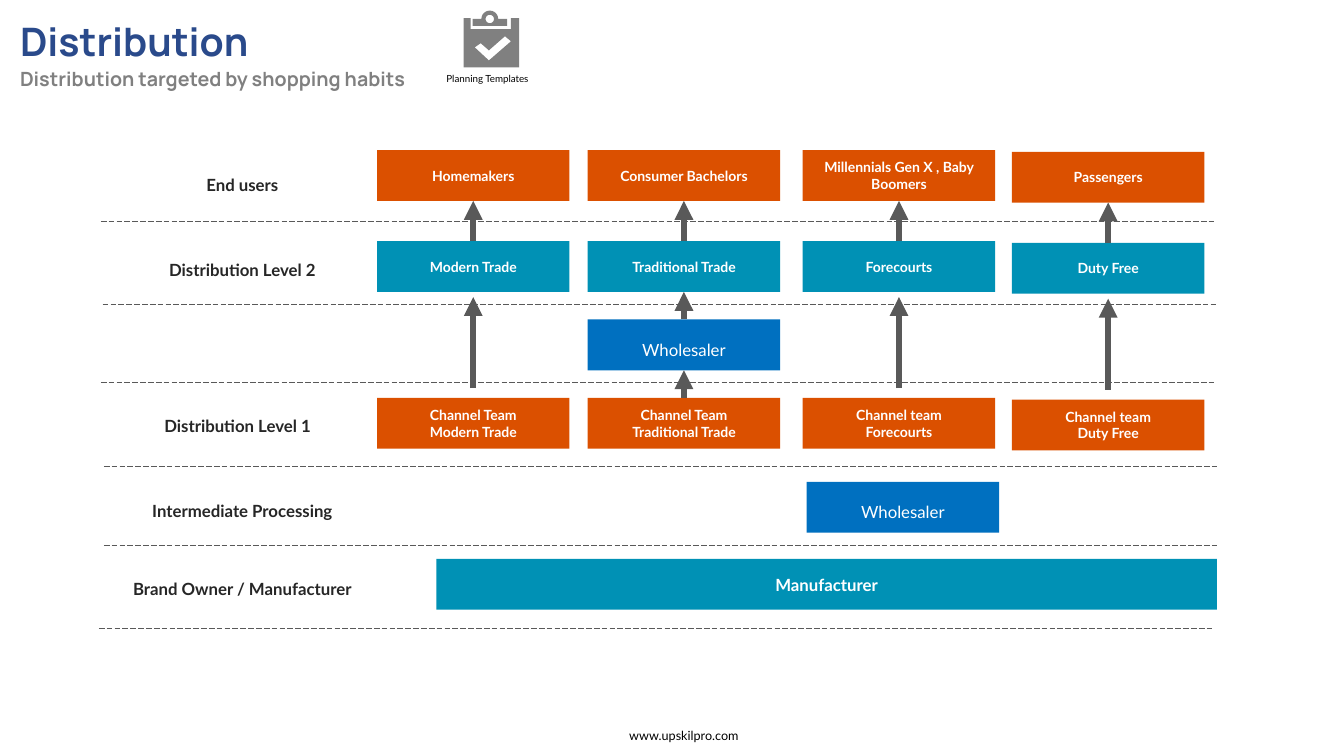
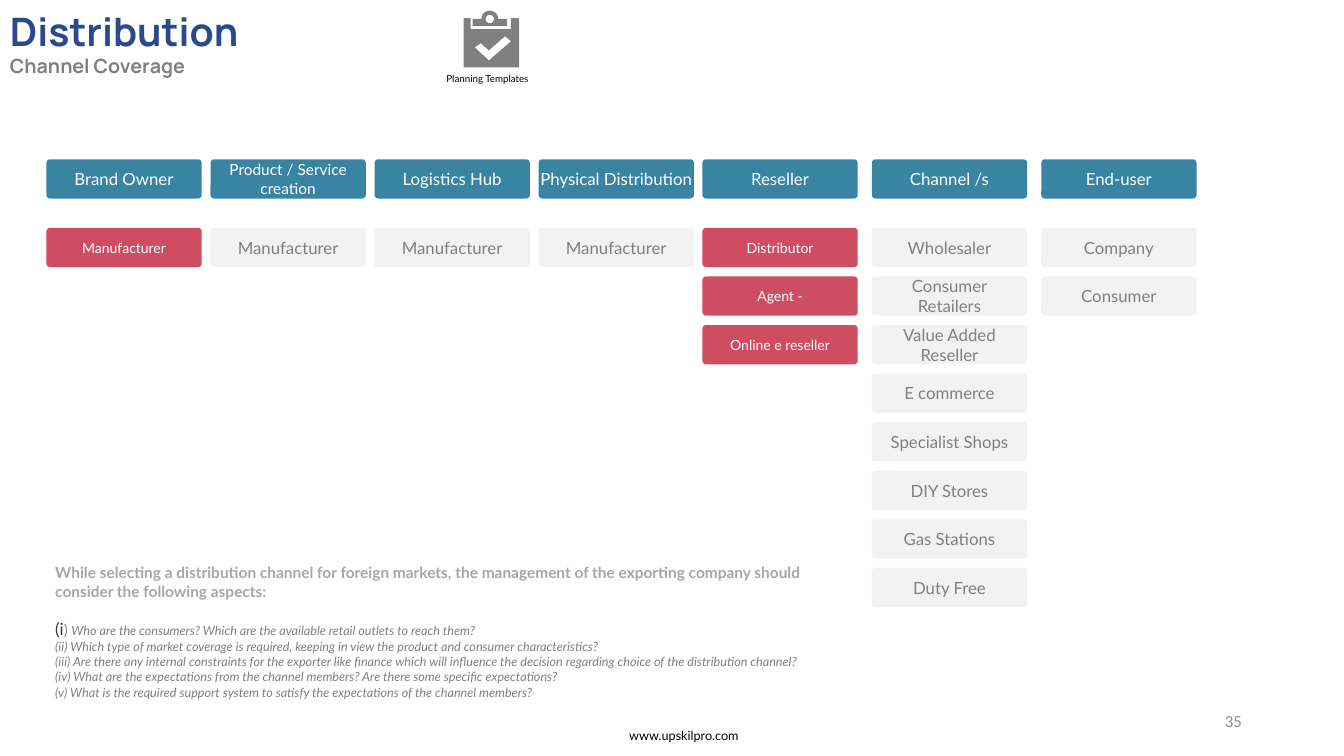
import math

import lxml.etree
import pptx
import pptx.dml.color
import pptx.enum.dml
import pptx.enum.shapes
import pptx.enum.text
import pptx.oxml.ns
import pptx.util

Pt = pptx.util.Pt
ALIGN = pptx.enum.text.PP_ALIGN
ANCHOR = pptx.enum.text.MSO_ANCHOR
SHAPE = pptx.enum.shapes.MSO_SHAPE
qn = pptx.oxml.ns.qn

COLORS = {
    "navy": "2A4A8B", "gray": "808080", "orange": "DB5000", "teal": "0091B5",
    "blue": "0070C0", "white": "FFFFFF", "black": "000000", "line": "595959",
    "label": "262626", "header": "3984A3", "red": "CF4D61", "pale": "F2F2F2",
    "lead": "A6A6A6", "marker": "3B3838", "number": "8C8C8C",
}
TITLE_FONT = "Manrope"
BODY_FONT = "Lato"


def rgb(name):
    return pptx.dml.color.RGBColor.from_string(COLORS[name])


def add_run(paragraph, text, size=12, color="black", bold=False, italic=False, font=BODY_FONT):
    run = paragraph.add_run()
    run.text = text
    run.font.size = Pt(size)
    run.font.bold = bold
    run.font.italic = italic
    run.font.name = font
    run.font.color.rgb = rgb(color)


def write(frame, text, align=ALIGN.LEFT, line_spacing=None, space_before=None, **run_format):
    for line in text.split("\n"):
        paragraph = frame.paragraphs[0]
        if paragraph.runs:
            paragraph = frame.add_paragraph()
        paragraph.alignment = align
        if line_spacing:
            paragraph.line_spacing = line_spacing
        if space_before:
            paragraph.space_before = Pt(space_before)
        add_run(paragraph, line, **run_format)
    return paragraph


def add_text_box(slide, left, top, width, height, anchor=ANCHOR.TOP):
    box = slide.shapes.add_textbox(Pt(left), Pt(top), Pt(width), Pt(height))
    box.text_frame.word_wrap = True
    box.text_frame.vertical_anchor = anchor
    return box.text_frame


def add_box(slide, left, top, width, height, text, fill, kind=SHAPE.RECTANGLE,
            anchor=ANCHOR.MIDDLE, inset=True, outline=None, **text_format):
    shape = slide.shapes.add_shape(kind, Pt(left), Pt(top), Pt(width), Pt(height))
    shape.shadow.inherit = False
    shape.fill.solid()
    shape.fill.fore_color.rgb = rgb(fill)
    if outline:
        shape.line.color.rgb = rgb(outline)
        shape.line.width = Pt(1)
    else:
        shape.line.fill.background()
    frame = shape.text_frame
    frame.word_wrap = True
    frame.vertical_anchor = anchor
    if not inset:
        frame.margin_left = frame.margin_right = frame.margin_top = frame.margin_bottom = 0
    write(frame, text, align=ALIGN.CENTER, **text_format)
    return shape


def add_line(slide, start, end, width, dashed=False, arrow=False):
    connector = slide.shapes.add_connector(
        pptx.enum.shapes.MSO_CONNECTOR.STRAIGHT, *[Pt(value) for value in (*start, *end)])
    connector.line.color.rgb = rgb("line")
    connector.line.width = Pt(width)
    if dashed:
        connector.line.dash_style = pptx.enum.dml.MSO_LINE.LONG_DASH
    properties = connector._element.spPr
    if arrow:
        lxml.etree.SubElement(properties.find(qn("a:ln")), qn("a:tailEnd"), type="triangle")
    lxml.etree.SubElement(properties, qn("a:effectLst"))
    return connector


def join_up(slide, lower, upper):
    connector = add_line(slide, (0, 0), (0, 0), 4.5, arrow=True)
    connector.begin_connect(lower, 0)
    connector.end_connect(upper, 2)


def arc(center_x, center_y, radius, first, last):
    angles = [math.radians(degree) for degree in range(first, last + 1, 15)]
    return [(center_x + radius * math.cos(angle), center_y + radius * math.sin(angle))
            for angle in angles]


def add_outline(slide, left, top, contours, fill):
    builder = None
    for contour in contours:
        points = [(Pt(left + x), Pt(top + y)) for x, y in contour]
        if builder is None:
            builder = slide.shapes.build_freeform(*points[0])
        else:
            builder.move_to(*points[0])
        builder.add_line_segments(points[1:], close=True)
    shape = builder.convert_to_shape()
    shape.shadow.inherit = False
    shape.fill.solid()
    shape.fill.fore_color.rgb = rgb(fill)
    shape.line.fill.background()


def add_clipboard(slide, left, top):
    clip = [(6.5, 10), (6.5, 5), *arc(18.7, 5, 6, 180, 360), (31, 5), (31, 10)]
    board = [(33.8, 4.3), (33.8, 12.2), (5, 12.2), (5, 4.3), (0, 4.3),
             (0, 39.6), (39.6, 39.6), (39.6, 4.3)]
    check = [(18, 34.6), (7.9, 25.2), (12.2, 22.3), (18, 27.4), (29.5, 17.3), (33.8, 20.9)]
    add_outline(slide, left, top, [clip, arc(18.7, 5, 3, 0, 345)], "gray")
    add_outline(slide, left, top, [board, check], "gray")
    frame = add_text_box(slide, left - 23.7, top + 39.6, 81.4, 15.8)
    write(frame, "Planning Templates", align=ALIGN.CENTER, size=7)


def add_frame(presentation, subtitle, left, top, subtitle_gap=None):
    slide = presentation.slides.add_slide(presentation.slide_layouts[6])
    frame = add_text_box(slide, left, top, 315, 60)
    write(frame, "Distribution", size=28, color="navy", bold=True, font=TITLE_FONT)
    write(frame, subtitle, size=14, color="gray", bold=True, font=TITLE_FONT,
          space_before=subtitle_gap)
    add_clipboard(slide, 331.2, 8.6)
    footer = add_text_box(slide, 375.8, 516.2, 225.4, 18)
    write(footer, "www.upskilpro.com", align=ALIGN.CENTER, size=9)
    return slide


def add_levels(slide, left, top):
    width, height = 137.5, 36.3
    node_format = dict(size=10, color="white", bold=True)
    wholesaler_format = dict(size=12, color="white", line_spacing=2,
                             anchor=ANCHOR.TOP, inset=False)
    columns = [
        (198.7, 0, "Homemakers", "Modern Trade", "Channel Team\nModern Trade"),
        (349.2, 0, "Consumer Bachelors", "Traditional Trade", "Channel Team\nTraditional Trade"),
        (502.8, 0, "Millennials Gen X , Baby Boomers", "Forecourts", "Channel team\nForecourts"),
        (652.2, 1.2, "Passengers", "Duty Free", "Channel team\nDuty Free"),
    ]
    for x, drop, end_user, outlet, team in columns:
        user_box, outlet_box, team_box = [
            add_box(slide, left + x, top + y + drop, width, height, text, fill, **node_format)
            for y, text, fill in ((0, end_user, "orange"), (65, outlet, "teal"),
                                  (177, team, "orange"))]
        join_up(slide, outlet_box, user_box)
        if outlet == "Traditional Trade":
            wholesaler = add_box(slide, left + x, top + 121, width, height,
                                 "Wholesaler", "blue", **wholesaler_format)
            join_up(slide, team_box, wholesaler)
            join_up(slide, wholesaler, outlet_box)
        else:
            middle = left + x + width / 2
            add_line(slide, (middle, top + drop + 170), (middle, top + drop + 105),
                     4.5, arrow=True)
    add_box(slide, left + 505.6, top + 237, width, height, "Wholesaler", "blue",
            **wholesaler_format)
    add_box(slide, left + 241.2, top + 292, 557.4, height, "Manufacturer", "teal",
            size=12, color="white", bold=True)

    labels = [
        (19.4, 3, "End users"), (19.4, 64.2, "Distribution Level 2"),
        (16, 175.4, "Distribution Level 1"), (19.4, 236.3, "Intermediate Processing"),
        (19.4, 292, "Brand Owner / Manufacturer"),
    ]
    for x, y, text in labels:
        add_box(slide, left + x, top + y, 166.3, height, text, "white", outline="white",
                anchor=ANCHOR.TOP, inset=False, size=12, color="label", bold=True,
                line_spacing=2)
    dividers = [(1.4, 50.8), (2.8, 110), (1.4, 166), (3.6, 226), (3.6, 282), (0, 342)]
    for x, y in dividers:
        add_line(slide, (left + x, top + y), (left + x + 794.9, top + y), 0.5, dashed=True)


def add_channels(slide, left, top):
    red, pale = ("red", 10, "white"), ("pale", 12, "gray")
    columns = [
        (0, "Brand Owner", 12, red, ["Manufacturer"]),
        (117.2, "Product / Service creation", 11, pale, ["Manufacturer"]),
        (234.4, "Logistics Hub", 12, pale, ["Manufacturer"]),
        (351.6, "Physical Distribution", 12, pale, ["Manufacturer"]),
        (468.6, "Reseller", 12, red, ["Distributor", "Agent -", "Online e reseller"]),
        (589.6, "Channel /s", 12, pale,
         ["Wholesaler", "Consumer Retailers", "Value Added Reseller", "E commerce",
          "Specialist Shops", "DIY Stores", "Gas Stations", "Duty Free"]),
        (710.6, "End-user", 12, pale, ["Company", "Consumer"]),
    ]
    for x, heading, heading_size, (fill, size, color), members in columns:
        cells = [(0, heading, "header", heading_size, "white", False)]
        cells += [(49 + 34.7 * row, member, fill, size, color, True)
                  for row, member in enumerate(members)]
        for y, text, cell_fill, cell_size, cell_color, inset in cells:
            cell = add_box(slide, left + x, top + y, 110.9, 28, text, cell_fill,
                           kind=SHAPE.ROUNDED_RECTANGLE, inset=inset,
                           size=cell_size, color=cell_color)
            cell.adjustments[0] = 0.09


def add_questions(slide, left, top):
    frame = add_text_box(slide, left, top, 581, 105)
    write(frame, "While selecting a distribution channel for foreign markets, the management "
          "of the exporting company should consider the following aspects:",
          size=11, color="lead", bold=True)
    question_format = dict(size=9, color="gray", italic=True)
    first = write(frame, "(i", size=12, color="marker", space_before=13.2)
    add_run(first, ") ", size=10.5, color="gray")
    add_run(first, "Who are the consumers? Which are the available retail outlets to reach them?",
            **question_format)
    questions = [
        "(ii) Which type of market coverage is required, keeping in view the product and "
        "consumer characteristics?",
        "(iii) Are there any internal constraints for the exporter like finance which will "
        "influence the decision regarding choice of the distribution channel?",
        "(iv) What are the expectations from the channel members? Are there some specific "
        "expectations?",
        "(v) What is the required support system to satisfy the expectations of the channel "
        "members?",
    ]
    write(frame, "\n".join(questions), **question_format)


def build_shopping_habits(presentation):
    slide = add_frame(presentation, "Distribution targeted by shopping habits", 7.2, 8.5,
                      subtitle_gap=2)
    add_levels(slide, 70.6, 107.2)


def build_channel_coverage(presentation):
    slide = add_frame(presentation, "Channel Coverage", 0, 1.4)
    add_channels(slide, 33.2, 113.8)
    add_questions(slide, 32.4, 398.9)
    number = add_text_box(slide, 678.2, 500.4, 216, 28.8, anchor=ANCHOR.MIDDLE)
    write(number, "35", align=ALIGN.RIGHT, size=12, color="number", font="Calibri")


def main():
    presentation = pptx.Presentation()
    presentation.slide_width = Pt(960)
    presentation.slide_height = Pt(540)
    build_shopping_habits(presentation)
    build_channel_coverage(presentation)
    presentation.save("out.pptx")


if __name__ == "__main__":
    main()
